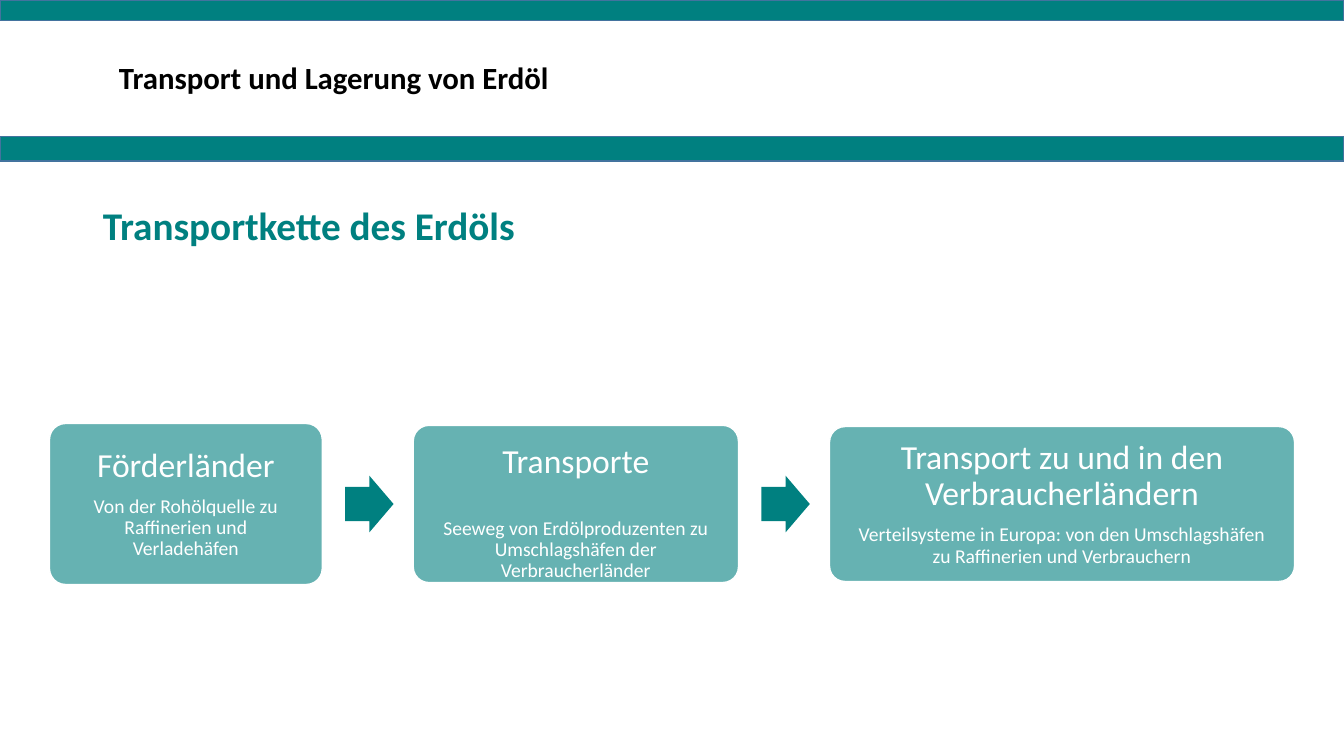
from lxml.etree import SubElement
from pptx import Presentation
from pptx.dml.color import RGBColor
from pptx.enum.shapes import MSO_SHAPE as Preset
from pptx.enum.text import MSO_ANCHOR as Anchor, MSO_AUTO_SIZE as AutoSize, PP_ALIGN as Align
from pptx.oxml.ns import qn
from pptx.util import Inches, Pt

TEAL, WHITE, BLACK, BAR_EDGE = "008080", "FFFFFF", "000000", "43739E"


def color(hex_string):
    """Return the colour for a hex string."""
    return RGBColor.from_string(hex_string)


class SlideBuilder:
    """Holds the style and the current slide; lengths are percent of the slide's size."""

    font_name = "Calibri"
    line_spacing = 0.9

    def __init__(self, presentation):
        """Add a title-and-content slide to the presentation."""
        self.width, self.height = presentation.slide_width, presentation.slide_height
        self.slide = presentation.slides.add_slide(presentation.slide_layouts[1])

    def frame(self, left, top, width, height):
        """Turn percentages into lengths on the slide."""
        return (int(self.width * left / 100), int(self.height * top / 100),
                int(self.width * width / 100), int(self.height * height / 100))

    def add_text(self, paragraph, text, size, hex_string, bold=False, align=Align.LEFT, after=0):
        """Format a paragraph and add its run."""
        paragraph.alignment = align
        paragraph.line_spacing = self.line_spacing
        paragraph.space_before, paragraph.space_after = Pt(0), Pt(after)
        run = paragraph.add_run()
        run.text = text
        run.font.name, run.font.size, run.font.bold = self.font_name, Pt(size), bold
        run.font.color.rgb = color(hex_string)

    def placeholder(self, index, frame, text, size, hex_string, anchor):
        """Move a placeholder and fill it with one unbulleted bold line."""
        shape = self.slide.placeholders[index]
        shape.left, shape.top, shape.width, shape.height = self.frame(*frame)
        text_frame = shape.text_frame
        text_frame.auto_size, text_frame.vertical_anchor = AutoSize.NONE, anchor
        paragraph = text_frame.paragraphs[0]
        properties = paragraph._p.get_or_add_pPr()
        properties.set("marL", "0")
        properties.set("indent", "0")
        SubElement(properties, qn("a:buNone"))
        self.add_text(paragraph, text, size, hex_string, bold=True)

    def shape(self, preset, frame, line=None, opacity=None, adjustments=()):
        """Draw a teal preset shape."""
        shape = self.slide.shapes.add_shape(preset, *self.frame(*frame))
        shape.shadow.inherit = False
        shape.fill.solid()
        shape.fill.fore_color.rgb = color(TEAL)
        if opacity:
            fill = shape._element.spPr.find(qn("a:solidFill"))
            SubElement(fill[0], qn("a:alpha"), val=str(opacity * 1000))
        if line:
            shape.line.color.rgb, shape.line.width = color(line), Pt(1)
        else:
            shape.line.fill.background()
        for number, value in enumerate(adjustments):
            shape.adjustments[number] = value
        return shape

    def stage(self, frame, heading, detail, anchor, gap):
        """Draw a rounded box with a heading and a detail text."""
        shape = self.shape(Preset.ROUNDED_RECTANGLE, frame, WHITE, 60, [0.1])
        text_frame = shape.text_frame
        text_frame.word_wrap, text_frame.vertical_anchor = True, anchor
        text_frame.margin_left = text_frame.margin_right = Inches(0.15)
        text_frame.margin_top = text_frame.margin_bottom = Inches(0.14)
        self.add_text(text_frame.paragraphs[0], heading, 24, WHITE, align=Align.CENTER, after=gap)
        self.add_text(text_frame.add_paragraph(), detail, 14, WHITE, align=Align.CENTER)

    def chain(self, stages, left, middle, gap):
        """Lay stages in a row around a middle line, with an arrow in each gap."""
        arrow_width, arrow_height, arrow_offset = 3.6, 7.5, 1.7
        for number, (width, height, *content) in enumerate(stages):
            if number:
                self.shape(Preset.RIGHT_ARROW,
                           (left - gap + arrow_offset, middle - arrow_height / 2,
                            arrow_width, arrow_height), adjustments=[0.6, 0.5])
            self.stage((left, middle - height / 2, width, height), *content)
            left += width + gap


def main():
    """Build and save the slide."""
    presentation = Presentation()
    presentation.slide_width, presentation.slide_height = Inches(13.33), Inches(7.5)
    builder = SlideBuilder(presentation)
    for top, height in [(0, 2.7), (18.1, 3.2)]:
        builder.shape(Preset.RECTANGLE, (0, top, 100, height), BAR_EDGE)
    builder.placeholder(0, (8.1, 5.7, 77.5, 9.7), "Transport und Lagerung von Erdöl",
                        22, BLACK, Anchor.MIDDLE)
    builder.placeholder(1, (6.9, 26.7, 86.3, 63.5), "Transportkette des Erdöls",
                        28, TEAL, Anchor.TOP)
    stages = [
        (20.3, 21.3, "Förderländer",
         "Von der Rohölquelle zu Raffinerien und Verladehäfen", Anchor.MIDDLE, 8.4),
        (24.2, 20.8, "Transporte",
         "Seeweg von Erdölproduzenten zu Umschlagshäfen der Verbraucherländer", Anchor.TOP, 27),
        (34.6, 20.5, "Transport zu und in den Verbraucherländern",
         "Verteilsysteme in Europa: von den Umschlagshäfen zu Raffinerien und Verbrauchern",
         Anchor.MIDDLE, 8.4),
    ]
    builder.chain(stages, left=3.68, middle=66.67, gap=6.77)
    presentation.save("out.pptx")


if __name__ == "__main__":
    main()
